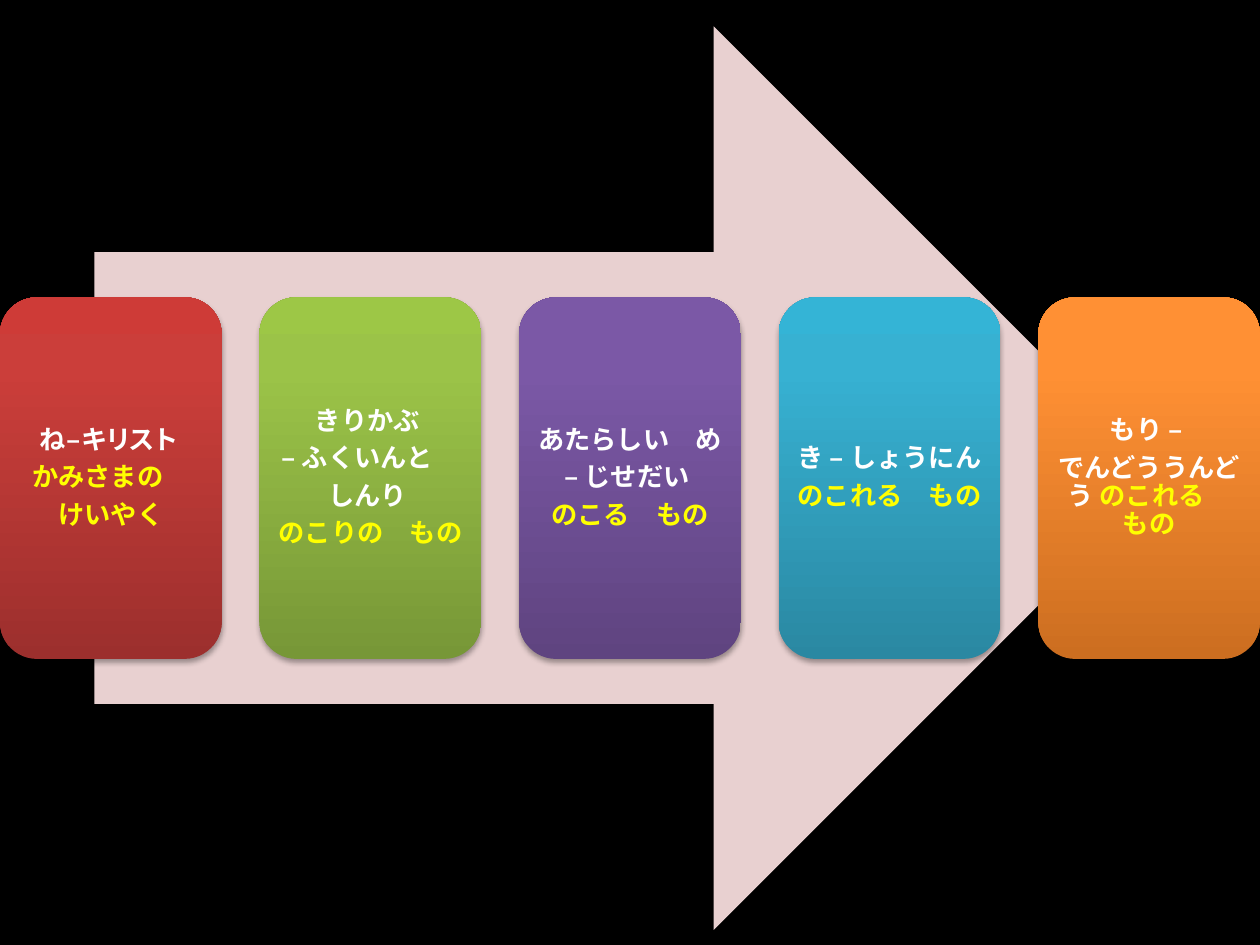
from pptx import Presentation
from pptx.dml.color import RGBColor
from pptx.enum.shapes import MSO_SHAPE as Shape
from pptx.enum.text import MSO_ANCHOR as Anchor, PP_ALIGN as Align
from pptx.oxml import parse_xml
from pptx.oxml.ns import nsdecls
from pptx.util import Inches, Pt

BLACK = RGBColor(0x00, 0x00, 0x00)
PINK = RGBColor(0xE8, 0xD0, 0xD0)
WHITE = RGBColor(0xFF, 0xFF, 0xFF)
YELLOW = RGBColor(0xFF, 0xFF, 0x00)

# Gradient colours from the bottom of a card to its top
RED = (RGBColor(0x9C, 0x2F, 0x2D), RGBColor(0xCB, 0x3E, 0x3A), RGBColor(0xCE, 0x3B, 0x37))
GREEN = (RGBColor(0x77, 0x97, 0x37), RGBColor(0x9B, 0xC3, 0x48), RGBColor(0x9D, 0xC7, 0x46))
PURPLE = (RGBColor(0x5F, 0x44, 0x80), RGBColor(0x7B, 0x58, 0xA6), RGBColor(0x7C, 0x57, 0xA8))
TEAL = (RGBColor(0x2A, 0x88, 0xA2), RGBColor(0x37, 0xB1, 0xD2), RGBColor(0x34, 0xB4, 0xD6))
ORANGE = (RGBColor(0xCC, 0x6E, 0x20), RGBColor(0xFF, 0x90, 0x34), RGBColor(0xFF, 0x91, 0x36))
GRADIENT_STOPS = (0, 80, 100)

SLIDE_WIDTH, SLIDE_HEIGHT = 10, 7.5
CARD_WIDTH, CARD_HEIGHT, CARD_TOP = 1.76, 2.87, 2.36
CARD_PADDING = 0.09

# Each card: gradient, then paragraphs of (text, colour, letter spacing) runs
CARDS = [
    (RED, [[("ね – キリスト ", WHITE, -1.5)],
           [("かみさまの　", YELLOW, 0)],
           [("けいやく", YELLOW, 0)]]),
    (GREEN, [[("きりかぶ ", WHITE, 0)],
             [("– ふくいんと　", WHITE, 0)],
             [("しんり ", WHITE, 0)],
             [("のこりの　もの", YELLOW, 0)]]),
    (PURPLE, [[("あたらしい　め ", WHITE, 0)],
              [("– じせだい ", WHITE, 0)],
              [("のこる　もの", YELLOW, 0)]]),
    (TEAL, [[("き – しょうにん ", WHITE, 0)],
            [("のこれる　もの", YELLOW, 0)]]),
    (ORANGE, [[("もり – ", WHITE, 0)],
              [("でんどううんどう ", WHITE, 0), ("のこれる　もの", YELLOW, 0)]]),
]


class SlideBuilder:
    font_name = "Noto Sans CJK KR"
    font_size = 15

    def __init__(self, slide):
        self.slide = slide

    def background(self, color):
        fill = self.slide.background.fill
        fill.solid()
        fill.fore_color.rgb = color

    def arrow(self, left, top, width, height, color):
        shape = self.slide.shapes.add_shape(
            Shape.RIGHT_ARROW, Inches(left), Inches(top), Inches(width), Inches(height))
        shape.fill.solid()
        shape.fill.fore_color.rgb = color
        shape.line.fill.background()
        shape.shadow.inherit = False

    def card(self, left, top, width, height, colors):
        shape = self.slide.shapes.add_shape(
            Shape.ROUNDED_RECTANGLE, Inches(left), Inches(top), Inches(width), Inches(height))
        shape.line.fill.background()
        properties = shape._element.spPr
        stops = "".join(
            f'<a:gs pos="{stop * 1000}"><a:srgbClr val="{color}"/></a:gs>'
            for stop, color in zip(GRADIENT_STOPS, colors))
        properties.insert(2, parse_xml(
            f'<a:gradFill {nsdecls("a")} rotWithShape="1"><a:gsLst>{stops}</a:gsLst>'
            '<a:lin ang="16200000" scaled="0"/></a:gradFill>'))
        properties.append(parse_xml(
            f'<a:effectLst {nsdecls("a")}><a:outerShdw blurRad="{Pt(3.1)}" dist="{Pt(1.8)}" '
            'dir="5400000" rotWithShape="0"><a:srgbClr val="000000"><a:alpha val="35000"/>'
            '</a:srgbClr></a:outerShdw></a:effectLst>'))

    def text(self, left, top, width, height, paragraphs):
        box = self.slide.shapes.add_textbox(
            Inches(left), Inches(top), Inches(width), Inches(height))
        frame = box.text_frame
        frame.word_wrap = True
        frame.vertical_anchor = Anchor.MIDDLE
        frame.margin_left = frame.margin_right = Inches(0.06)
        frame.margin_top = frame.margin_bottom = Inches(0.06)
        for index, runs in enumerate(paragraphs):
            paragraph = frame.add_paragraph() if index else frame.paragraphs[0]
            paragraph.alignment = Align.CENTER
            paragraph.line_spacing = 0.9
            paragraph.space_after = Pt(self.font_size * 0.35)
            for text, color, spacing in runs:
                self.run(paragraph, text, color, spacing)

    def run(self, paragraph, text, color, spacing):
        run = paragraph.add_run()
        run.text = text
        run.font.name = self.font_name
        run.font.size = Pt(self.font_size)
        run.font.bold = True
        run.font.color.rgb = color
        properties = run._r.get_or_add_rPr()
        properties.set("lang", "ja-JP")
        if spacing:
            properties.set("spc", str(int(spacing * 100)))
        properties.append(parse_xml(f'<a:ea {nsdecls("a")} typeface="{self.font_name}"/>'))


def main():
    presentation = Presentation()
    presentation.slide_width = Inches(SLIDE_WIDTH)
    presentation.slide_height = Inches(SLIDE_HEIGHT)
    builder = SlideBuilder(presentation.slides.add_slide(presentation.slide_layouts[6]))

    # Backdrop
    builder.background(BLACK)
    builder.arrow(0.75, 0.21, 8.5, 7.17, PINK)

    # Five cards spread evenly over the slide width
    pitch = (SLIDE_WIDTH - CARD_WIDTH) / (len(CARDS) - 1)
    for index, (colors, paragraphs) in enumerate(CARDS):
        left = index * pitch
        builder.card(left, CARD_TOP, CARD_WIDTH, CARD_HEIGHT, colors)
        builder.text(left + CARD_PADDING, CARD_TOP + CARD_PADDING,
                     CARD_WIDTH - 2 * CARD_PADDING, CARD_HEIGHT - 2 * CARD_PADDING, paragraphs)

    presentation.save("out.pptx")


if __name__ == "__main__":
    main()
